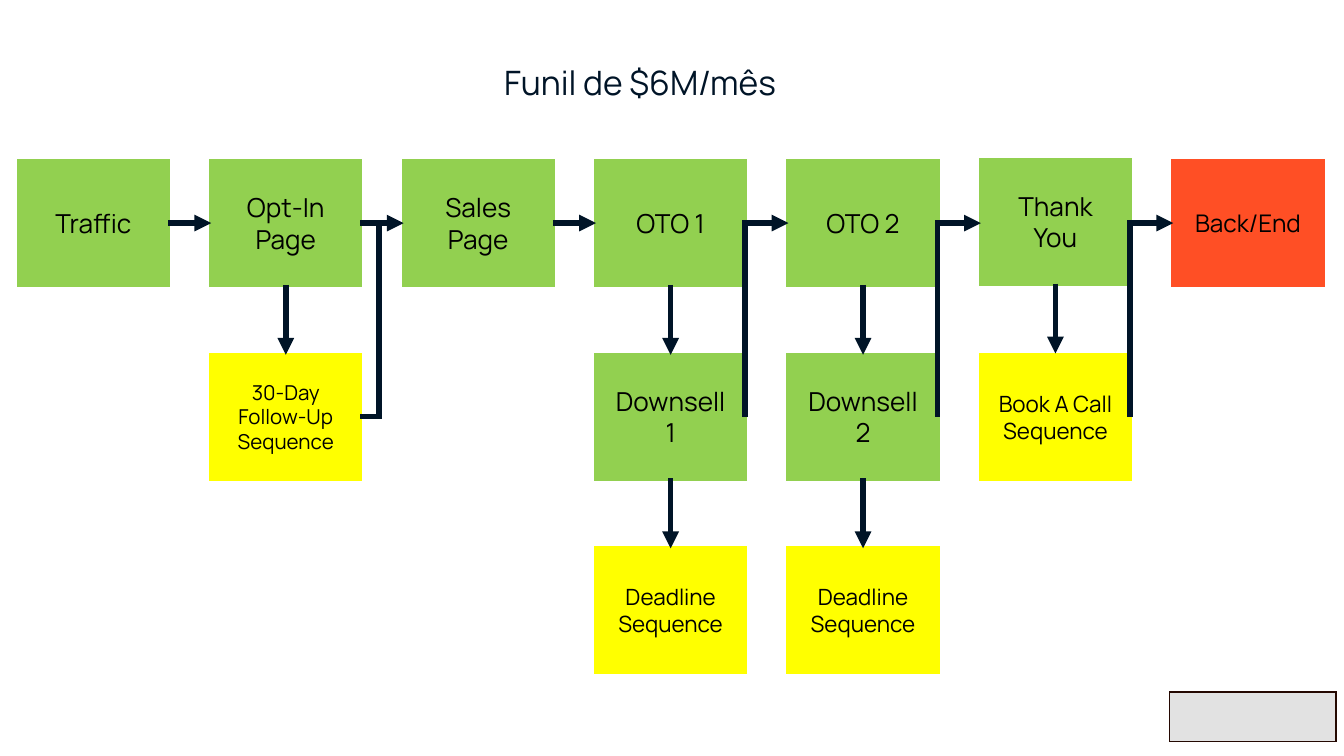
"""Builds the sales funnel slide."""
from lxml.etree import SubElement
from pptx import Presentation
from pptx.dml.color import RGBColor
from pptx.enum.shapes import MSO_CONNECTOR as Link, MSO_SHAPE as Preset
from pptx.enum.text import MSO_ANCHOR as Anchor, MSO_AUTO_SIZE as AutoSize, PP_ALIGN as Align
from pptx.oxml.ns import qn
from pptx.util import Inches, Pt

COLORS = {"green": "92D050", "yellow": "FFFF00", "orange": "FF4F25", "navy": "001427",
          "black": "000000", "grey": "E2E2E2", "brown": "240801"}
LEFT, TOP = 0.14, 1.2
COLUMN_STEP, ROW_STEP = 8.59 / 6, 1.44
BOX_WIDTH, BOX_HEIGHT = 1.11, 0.92
BEND = 0.14
LIFT = 0.01

STEPS = [
    (0, 0, "Traffic", "green", 14),
    (1, 0, "Opt-In Page", "green", 14),
    (2, 0, "Sales Page", "green", 14),
    (3, 0, "OTO 1", "green", 14),
    (4, 0, "OTO 2", "green", 14),
    (5, 0, "Thank You", "green", 14, LIFT),
    (6, 0, "Back/End", "orange", 13),
    (1, 1, "30-Day Follow-Up Sequence", "yellow", 11),
    (3, 1, "Downsell 1", "green", 14),
    (4, 1, "Downsell 2", "green", 14),
    (5, 1, "Book A Call Sequence", "yellow", 12),
    (3, 2, "Deadline Sequence", "yellow", 12),
    (4, 2, "Deadline Sequence", "yellow", 12),
]
DOWN_ARROWS = [(1, 0), (3, 0), (4, 0), (5, 0, LIFT), (4, 1), (3, 1)]


def color(name):
    return RGBColor.from_string(COLORS[name])


def write(frame, text, size=14, ink="black", align=Align.CENTER, anchor=Anchor.MIDDLE,
          font="Manrope", inset=0.05):
    frame.word_wrap = True
    frame.vertical_anchor = anchor
    frame.margin_left = frame.margin_right = Inches(0.1)
    frame.margin_top = frame.margin_bottom = Inches(inset)
    para = frame.paragraphs[0]
    para.alignment = align
    span = para.add_run()
    span.text = text
    span.font.size = Pt(size)
    span.font.name = font
    span.font.color.rgb = color(ink)


def draw_line(shape, ink, weight):
    shape.line.color.rgb = color(ink)
    shape.line.width = Pt(weight)
    outline = shape._element.spPr.find(qn("a:ln"))
    SubElement(outline, qn("a:miter"), lim="800000")
    return outline


def column_left(column):
    return LEFT + column * COLUMN_STEP


def row_top(row):
    return TOP + row * ROW_STEP


def row_middle(row):
    return row_top(row) + BOX_HEIGHT / 2


class FunnelSlide:
    """Holds the line style and the current slide."""

    def __init__(self, deck, ink="navy", weight=3):
        self.slide = deck.slides.add_slide(deck.slide_layouts[5])
        self.ink = ink
        self.weight = weight

    def title(self, text, left, top, width, height):
        box = self.slide.shapes.title
        box.left, box.top = Inches(left), Inches(top)
        box.width, box.height = Inches(width), Inches(height)
        write(box.text_frame, text, size=18, ink=self.ink, align=Align.LEFT,
              anchor=Anchor.TOP, inset=0.1)
        box.text_frame.auto_size = AutoSize.SHAPE_TO_FIT_TEXT

    def box(self, left, top, width, height, fill, border, weight):
        box = self.slide.shapes.add_shape(Preset.RECTANGLE, Inches(left), Inches(top),
                                          Inches(width), Inches(height))
        box.fill.solid()
        box.fill.fore_color.rgb = color(fill)
        draw_line(box, border, weight)
        box.shadow.inherit = False
        return box

    def step(self, column, row, text, fill, size, lift=0):
        box = self.box(column_left(column), row_top(row) - lift, BOX_WIDTH, BOX_HEIGHT,
                       fill, fill, 2.25)
        write(box.text_frame, text, size=size)

    def connector(self, kind, x1, y1, x2, y2):
        link = self.slide.shapes.add_connector(kind, Inches(x1), Inches(y1),
                                               Inches(x2), Inches(y2))
        outline = draw_line(link, self.ink, self.weight)
        properties = link._element.spPr
        SubElement(properties, qn("a:effectLst"))
        return properties, outline

    def arrow(self, x1, y1, x2, y2):
        _, outline = self.connector(Link.STRAIGHT, x1, y1, x2, y2)
        SubElement(outline, qn("a:tailEnd"), type="triangle")

    def elbow(self, left, top, width, height, **turn):
        properties, _ = self.connector(Link.ELBOW, left, top, left + width, top + height)
        properties.find(qn("a:prstGeom")).set("prst", "bentConnector2")
        for name, value in turn.items():
            properties.find(qn("a:xfrm")).set(name, value)

    def right_arrow(self, column):
        middle = row_middle(0)
        self.arrow(column_left(column) + BOX_WIDTH, middle, column_left(column + 1), middle)

    def down_arrow(self, column, row, lift=0):
        center = column_left(column) + BOX_WIDTH / 2
        self.arrow(center, row_top(row) + BOX_HEIGHT - lift, center, row_top(row + 1) - lift)

    def side_return(self, column):
        self.elbow(column_left(column) + BOX_WIDTH, row_middle(0), BEND, ROW_STEP,
                   rot="10800000", flipH="1")

    def edge_return(self, column):
        shift = (ROW_STEP - BEND) / 2
        self.elbow(column_left(column) + BOX_WIDTH - shift, row_middle(0) + shift,
                   ROW_STEP, BEND, rot="16200000")


def main():
    deck = Presentation()
    deck.slide_width = Inches(10)
    deck.slide_height = deck.slide_width * 9 // 16
    page = FunnelSlide(deck)
    for step in STEPS:
        page.step(*step)
    for column in range(6):
        page.right_arrow(column)
    for place in DOWN_ARROWS:
        page.down_arrow(*place)
    page.side_return(1)
    for column in (3, 4, 5):
        page.edge_return(column)
    page.title("Funil de $6M/mês", 3.65, 0.36, 2.74, 0.5)
    page.box(8.7, 5.15, 1.24, 0.37, "grey", "brown", 0.75)
    deck.save("out.pptx")


if __name__ == "__main__":
    main()
